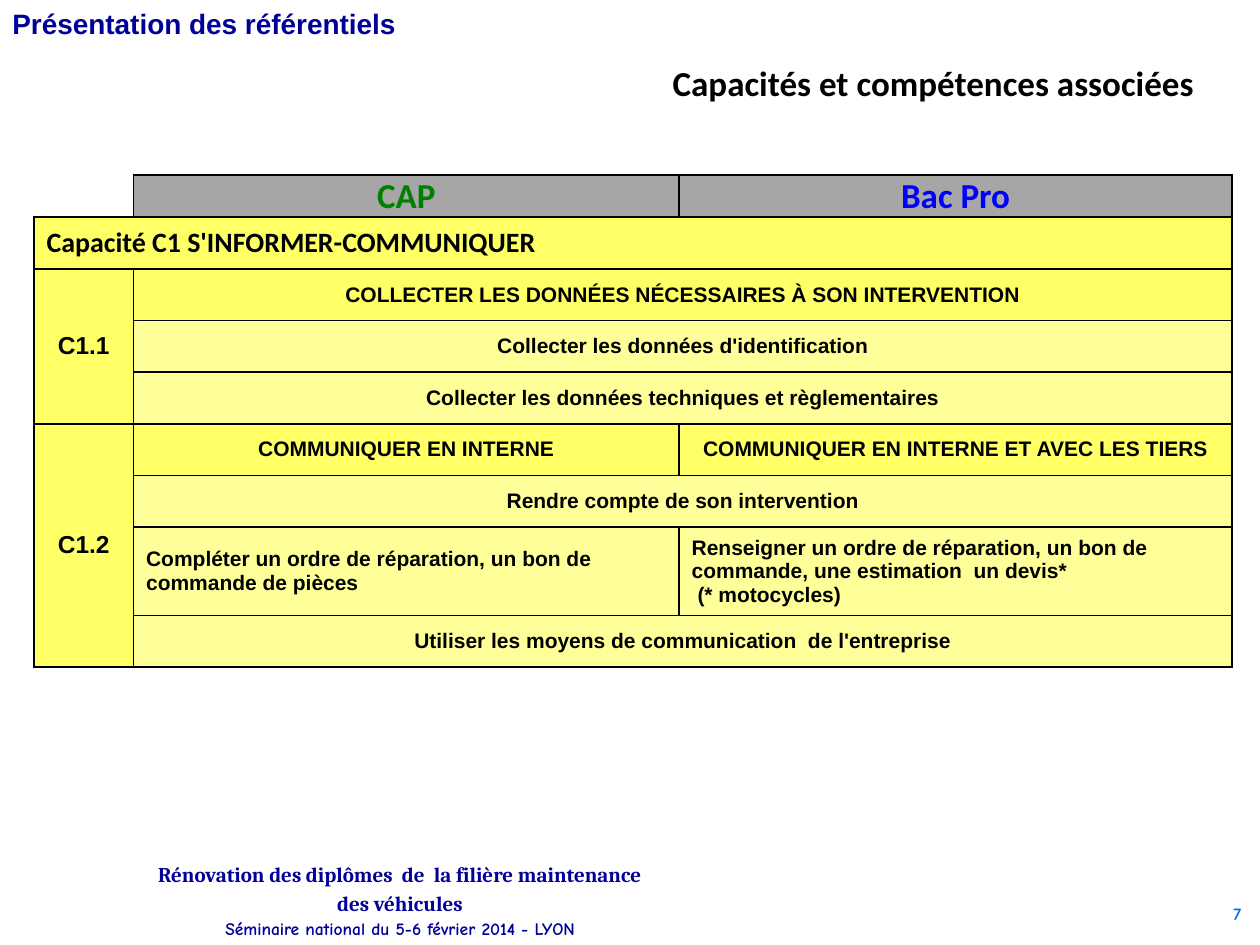
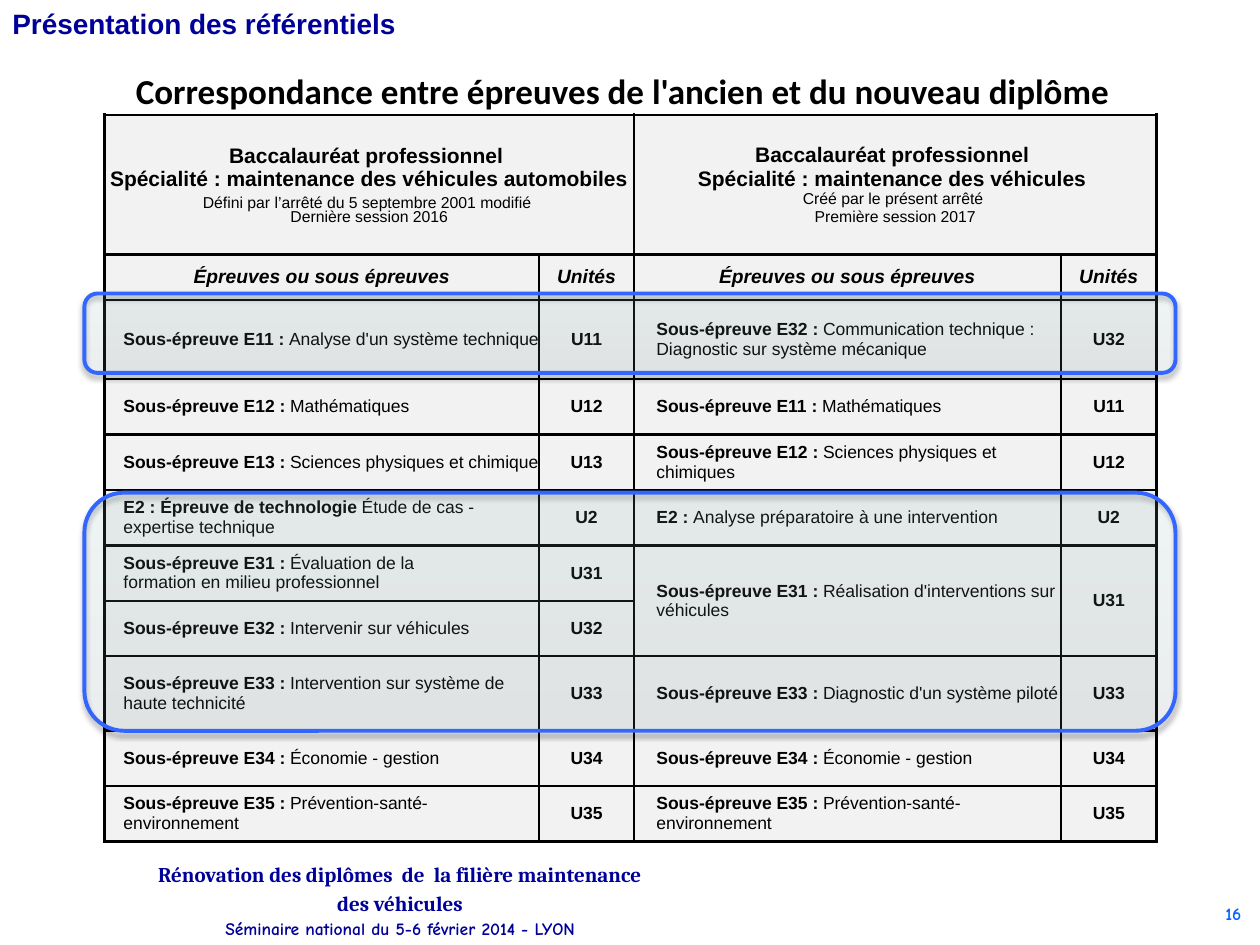
"""Build two slides on the capacities and exams of the vehicle maintenance diplomas."""
import copy

import lxml.etree
import pptx
import pptx.dml.color
import pptx.enum.shapes
import pptx.enum.text
import pptx.oxml
import pptx.oxml.ns
import pptx.util

Inches = pptx.util.Inches
Pt = pptx.util.Pt
ALIGN = pptx.enum.text.PP_ALIGN
ANCHOR = pptx.enum.text.MSO_ANCHOR

COLORS = {
    "navy": "000099", "number": "0066FF", "black": "000000", "header": "A6A6A6",
    "cap": "008000", "bac": "0000FF", "strong": "FFFF66", "soft": "FFFF99",
    "grid": "F2F2F2", "frame": "3366FF",
}
FRAME_STOPS = [(0, "87ABAE"), (80, "AFDEE2"), (100, "AFE0E4")]


def look(size, name="Arial", color="black", bold=True, italic=False):
    return {"size": Pt(size), "name": name, "color": color, "bold": bold, "italic": italic}


TITLE = look(20, "Calibri")
BANNER = look(16, "Arial", "navy")
NUMBER = look(10, "Comic Neue", "number")
SUBTITLE = look(9, bold=False)
ITALIC = look(11, italic=True)
LABEL = look(10)
PLAIN = look(10, bold=False)

BANNER_TEXT = "Présentation des référentiels"
FOOTER_LINES = [
    ("Rénovation des diplômes  de  la filière maintenance des véhicules",
     look(12, "Cambria", "navy")),
    ("Séminaire national du 5-6 février 2014 - LYON", look(10, "Comic Neue", "navy")),
]

SKILL_COLUMNS = [0.79, 4.33, 4.39]
SKILL_ROWS = [0.33] + [0.41] * 6 + [0.7, 0.41]
BODY = look(12)
CODE = look(14)
SKILL_CELLS = [
    (0, 1, 1, 1, "header", "c", look(20, "Calibri", "cap"), ["CAP"]),
    (0, 2, 1, 1, "header", "c", look(20, "Calibri", "bac"), ["Bac Pro"]),
    (1, 0, 1, 3, "strong", "l", look(16, "Calibri"), ["Capacité C1 S'INFORMER-COMMUNIQUER"]),
    (2, 0, 3, 1, "strong", "c", CODE, ["C1.1"]),
    (2, 1, 1, 2, "strong", "c", BODY, ["COLLECTER LES DONNÉES NÉCESSAIRES À SON INTERVENTION"]),
    (3, 1, 1, 2, "soft", "c", BODY, ["Collecter les données d'identification"]),
    (4, 1, 1, 2, "soft", "c", BODY, ["Collecter les données techniques et règlementaires"]),
    (5, 0, 4, 1, "strong", "c", CODE, ["C1.2"]),
    (5, 1, 1, 1, "strong", "c", BODY, ["COMMUNIQUER EN INTERNE"]),
    (5, 2, 1, 1, "strong", "c", BODY, ["COMMUNIQUER EN INTERNE ET AVEC LES TIERS"]),
    (6, 1, 1, 2, "soft", "c", BODY, ["Rendre compte de son intervention"]),
    (7, 1, 1, 1, "soft", "l", BODY,
     ["Compléter un ordre de réparation, un bon de commande de pièces"]),
    (7, 2, 1, 1, "soft", "l", BODY,
     ["Renseigner un ordre de réparation, un bon de commande, une estimation  un devis*",
      " (* motocycles)"]),
    (8, 1, 1, 2, "soft", "c", BODY, ["Utiliser les moyens de communication  de l'entreprise"]),
]

EXAM_COLUMNS = [3.45, 0.75, 3.39, 0.76]
EXAM_ROWS = [1.11, 0.36, 0.63] + [0.44] * 5 + [0.59, 0.44, 0.44]
EXAM_INDENTS = [0.15, 0.18]
OLD_DIPLOMA = [
    ([("Baccalauréat professionnel \nSpécialité : maintenance des véhicules automobiles", BODY)],
     {"alignment": ALIGN.CENTER}),
    ([("Défini par l’arrêté du 5 septembre 2001 modifié \nDernière session 2016", SUBTITLE)],
     {"alignment": ALIGN.CENTER, "line_spacing": 0.78, "space_before": Pt(3.6)}),
]
NEW_DIPLOMA = [
    ([("Baccalauréat professionnel \nSpécialité : maintenance des véhicules \n", BODY),
      ("Créé par le présent arrêté \nPremière session 2017", SUBTITLE)],
     {"alignment": ALIGN.CENTER}),
]
EXAMS = [
    [("Sous-épreuve E11 : ", "Analyse d'un système technique", "U11"),
     ("Sous-épreuve E32 : ", "Communication technique : Diagnostic sur système mécanique", "U32")],
    [("Sous-épreuve E12 : ", "Mathématiques", "U12"),
     ("Sous-épreuve E11 : ", "Mathématiques", "U11")],
    [("Sous-épreuve E13 : ", "Sciences physiques et chimique", "U13"),
     ("Sous-épreuve E12 : ", "Sciences physiques et chimiques", "U12")],
    [("E2 : Épreuve de technologie ", "Étude de cas - expertise technique", "U2"),
     ("E2 : ", "Analyse préparatoire à une intervention", "U2")],
    [("Sous-épreuve E31 : ", "Évaluation de la\nformation en milieu professionnel", "U31"),
     ("Sous-épreuve E31 : ", "Réalisation d'interventions sur véhicules", "U31")],
    [("Sous-épreuve E32 : ", "Intervenir sur véhicules", "U32"), None],
    [("Sous-épreuve E33 : ", "Intervention sur système de haute technicité", "U33"),
     ("Sous-épreuve E33 : ", "Diagnostic d'un système piloté", "U33")],
    [("Sous-épreuve E34 : ", "Économie - gestion", "U34"),
     ("Sous-épreuve E34 : ", "Économie - gestion", "U34")],
    [("Sous-épreuve E35 : ", "Prévention-santé-environnement", "U35"),
     ("Sous-épreuve E35 : ", "Prévention-santé-environnement", "U35")],
]
EXAM_FRAMES = [(0.67, 3.91, 8.66, 1.89), (0.67, 2.33, 8.66, 0.63)]


def rgb(color):
    return pptx.dml.color.RGBColor.from_string(COLORS[color])


def write(frame, paragraphs):
    for number, (runs, layout) in enumerate(paragraphs):
        para = frame.add_paragraph() if number else frame.paragraphs[0]
        for key, value in layout.items():
            setattr(para, key, value)
        for text, style in runs:
            for index, line in enumerate(text.split("\n")):
                if index:
                    para.add_line_break()
                    para._p[-1].append(copy.deepcopy(span._r.rPr))
                if line:
                    span = para.add_run()
                    span.text = line
                    for key, value in style.items():
                        if key == "color":
                            span.font.color.rgb = rgb(value)
                        else:
                            setattr(span.font, key, value)


def add_text(page, place, paragraphs, wrap=True, anchor=ANCHOR.TOP):
    box = page.shapes.add_textbox(*map(Inches, place))
    box.text_frame.word_wrap = wrap
    box.text_frame.vertical_anchor = anchor
    write(box.text_frame, paragraphs)


def add_page(deck, number):
    page = deck.slides.add_slide(deck.slide_layouts[6])
    add_text(page, (9.35, 7.12, 0.6, 0.32), [([(number, NUMBER)], {"alignment": ALIGN.RIGHT})])
    centred = {"alignment": ALIGN.CENTER, "line_spacing": 1.15}
    add_text(page, (1.14, 6.85, 4.07, 0.56), [([line], centred) for line in FOOTER_LINES],
             anchor=ANCHOR.MIDDLE)
    add_text(page, (0, 0, 3.27, 0.37), [([(BANNER_TEXT, BANNER)], {})])
    return page


def set_borders(cell, width, hidden=()):
    properties = cell._tc.get_or_add_tcPr()
    for side in ("lnL", "lnR", "lnT", "lnB"):
        line = lxml.etree.SubElement(properties, pptx.oxml.ns.qn("a:" + side), w=str(Pt(width)))
        if side in hidden:
            lxml.etree.SubElement(line, pptx.oxml.ns.qn("a:noFill"))
        else:
            solid = lxml.etree.SubElement(line, pptx.oxml.ns.qn("a:solidFill"))
            lxml.etree.SubElement(solid, pptx.oxml.ns.qn("a:srgbClr"), val=COLORS["black"])


def add_grid(page, left, top, columns, rows):
    place = map(Inches, (left, top, sum(columns), sum(rows)))
    table = page.shapes.add_table(len(rows), len(columns), *place).table
    table.first_row = table.horz_banding = False
    for column, width in zip(table.columns, columns):
        column.width = Inches(width)
    for row, height in zip(table.rows, rows):
        row.height = Inches(height)
    return table


def set_insets(cell, left=0, top=0, right=0, bottom=0):
    for side, value in zip(("left", "top", "right", "bottom"), (left, top, right, bottom)):
        setattr(cell, "margin_" + side, Inches(value))


def fill_cell(cell, color):
    cell.fill.solid()
    cell.fill.fore_color.rgb = rgb(color)


def add_skills(page):
    table = add_grid(page, 0.27, 1.39, SKILL_COLUMNS, SKILL_ROWS)
    corner = table.cell(0, 0)
    for cell in table.iter_cells():
        set_borders(cell, 1, ("lnL", "lnT") if cell == corner else ())
    corner.fill.background()
    set_insets(corner)
    for row, column, height, width, color, side, style, lines in SKILL_CELLS:
        cell = table.cell(row, column)
        if height * width > 1:
            cell.merge(table.cell(row + height - 1, column + width - 1))
        for i in range(row, row + height):
            for j in range(column, column + width):
                fill_cell(table.cell(i, j), color)
        gap = 0.05 if row else 0
        set_insets(cell, 0.1, gap, 0.1, gap)
        cell.vertical_anchor = ANCHOR.MIDDLE if row else ANCHOR.TOP
        layout = {"alignment": ALIGN.CENTER if side == "c" else ALIGN.LEFT}
        write(cell.text_frame, [([(line, style)], layout) for line in lines])


def add_exams(page):
    table = add_grid(page, 0.83, 0.91, EXAM_COLUMNS, EXAM_ROWS)
    for cell in table.iter_cells():
        set_borders(cell, 1.5)
        fill_cell(cell, "grid")
        set_insets(cell)
        cell.vertical_anchor = ANCHOR.MIDDLE
    centred = {"alignment": ALIGN.CENTER}
    for column, diploma in ((0, OLD_DIPLOMA), (2, NEW_DIPLOMA)):
        table.cell(0, column).merge(table.cell(0, column + 1))
        write(table.cell(0, column).text_frame, diploma)
        for offset, heading in enumerate(("Épreuves ou sous épreuves", "Unités")):
            write(table.cell(1, column + offset).text_frame, [([(heading, ITALIC)], centred)])
    for row, pair in enumerate(EXAMS, 2):
        for half, exam in enumerate(pair):
            column = 2 * half
            if exam is None:
                for j in (column, column + 1):
                    table.cell(row - 1, j).merge(table.cell(row, j))
                continue
            label, text, unit = exam
            first, *others = text.split("\n")
            cell = table.cell(row, column)
            set_insets(cell, left=EXAM_INDENTS[half])
            write(cell.text_frame, [([(label, LABEL), (first, PLAIN)], {})]
                  + [([(line, PLAIN)], {}) for line in others])
            write(table.cell(row, column + 1).text_frame, [([(unit, LABEL)], centred)])


def add_frame(page, place):
    kind = pptx.enum.shapes.MSO_SHAPE.ROUNDED_RECTANGLE
    shape = page.shapes.add_shape(kind, *map(Inches, place))
    shape.line.color.rgb = rgb("frame")
    shape.line.width = Pt(2.25)
    shape.shadow.inherit = False
    namespace = pptx.oxml.ns.nsdecls("a")
    stops = "".join(
        f'<a:gs pos="{place * 1000}"><a:srgbClr val="{color}"><a:alpha val="10000"/></a:srgbClr></a:gs>'
        for place, color in FRAME_STOPS)
    gradient = pptx.oxml.parse_xml(
        f'<a:gradFill {namespace} rotWithShape="1"><a:gsLst>{stops}</a:gsLst>'
        '<a:lin ang="16200000" scaled="0"/></a:gradFill>')
    shadow = pptx.oxml.parse_xml(
        f'<a:outerShdw {namespace} blurRad="{Pt(3.1)}" dist="{Pt(1.8)}" dir="5400000" '
        f'rotWithShape="0"><a:srgbClr val="{COLORS["black"]}"><a:alpha val="35000"/>'
        '</a:srgbClr></a:outerShdw>')
    properties = shape._element.spPr
    properties.find(pptx.oxml.ns.qn("a:ln")).addprevious(gradient)
    properties.find(pptx.oxml.ns.qn("a:effectLst")).append(shadow)


def main():
    deck = pptx.Presentation()
    deck.slide_width, deck.slide_height = Inches(10), Inches(7.5)

    page = add_page(deck, "7")
    add_text(page, (5.24, 0.44, 4.38, 0.44),
             [([("Capacités et compétences associées", TITLE)], {})], wrap=False)
    add_skills(page)

    page = add_page(deck, "16")
    add_exams(page)
    add_text(page, (0.98, 0.5, 8.62, 0.44),
             [([("Correspondance entre épreuves de l'ancien et du nouveau diplôme", TITLE)], {})])
    for place in EXAM_FRAMES:
        add_frame(page, place)

    deck.save("out.pptx")


if __name__ == "__main__":
    main()
